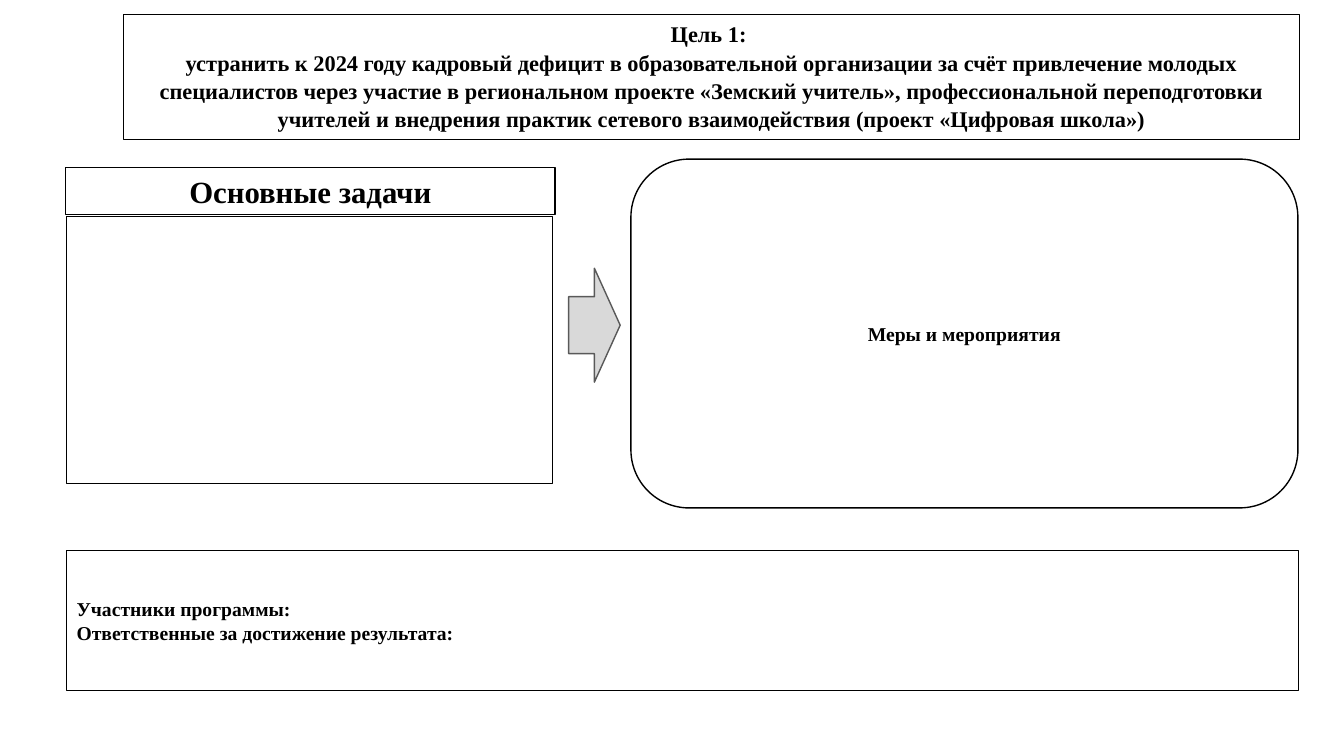
from pptx import Presentation
from pptx.dml.color import RGBColor
from pptx.enum.shapes import MSO_SHAPE
from pptx.enum.text import MSO_ANCHOR, PP_ALIGN
from pptx.util import Cm, Pt

RECT, ROUNDED, ARROW = MSO_SHAPE.RECTANGLE, MSO_SHAPE.ROUNDED_RECTANGLE, MSO_SHAPE.RIGHT_ARROW
TOP, MIDDLE = MSO_ANCHOR.TOP, MSO_ANCHOR.MIDDLE
CENTER, JUSTIFY = PP_ALIGN.CENTER, PP_ALIGN.JUSTIFY
FONT = "Times New Roman"
BLACK, WHITE, LIGHT_GRAY, DARK_GRAY = "000000", "FFFFFF", "D9D9D9", "595959"
GOAL = [
    "Цель 1: ",
    "устранить к 2024 году кадровый дефицит в образовательной организации за счёт "
    "привлечение молодых специалистов через участие в региональном проекте «Земский "
    "учитель», профессиональной переподготовки учителей и внедрения практик сетевого "
    "взаимодействия (проект «Цифровая школа»)",
]
PEOPLE = ["Участники программы:", "Ответственные за достижение результата:"]


def color(value):
    """Turn a hex string into a colour."""
    return RGBColor.from_string(value)


def add_box(shapes, kind, box, fill=WHITE, line=BLACK, width=1):
    """Add a filled, outlined shape; box is left, top, width, height in cm."""
    sp = shapes.add_shape(kind, *(Cm(v) for v in box))
    sp.shadow.inherit = False
    sp.fill.solid()
    sp.fill.fore_color.rgb = color(fill)
    sp.line.color.rgb = color(line)
    sp.line.width = Pt(width)
    return sp


def write(sp, lines, size, align=CENTER, anchor=MIDDLE, spacing=1.0):
    """Write bold black paragraphs into a shape."""
    tf = sp.text_frame
    tf.word_wrap = True
    tf.vertical_anchor = anchor
    tf.text = "\n".join(lines)
    for p in tf.paragraphs:
        p.alignment = align
        p.line_spacing = spacing
        p.font.name = FONT
        p.font.size = Pt(size)
        p.font.bold = True
        p.font.color.rgb = color(BLACK)


def main():
    """Build the slide with the goal, tasks, measures and participants."""
    prs = Presentation()
    prs.slide_width, prs.slide_height = Cm(33.87), Cm(19.05)
    s = prs.slides.add_slide(prs.slide_layouts[6])

    goal = add_box(s.shapes, RECT, (3.12, 0.36, 29.62, 3.15), width=0.5)
    write(goal, GOAL, 16, anchor=TOP, spacing=1.05)

    tasks = s.shapes.add_group_shape()
    heading = add_box(tasks.shapes, RECT, (1.65, 4.22, 12.34, 1.19))
    write(heading, ["Основные задачи"], 22)
    add_box(tasks.shapes, RECT, (1.68, 5.46, 12.24, 6.73))

    measures = add_box(s.shapes, ROUNDED, (15.9, 4.01, 16.81, 8.79))
    write(measures, ["Меры и мероприятия"], 14)
    add_box(s.shapes, ARROW, (14.33, 6.76, 1.3, 2.87), LIGHT_GRAY, DARK_GRAY)

    people = add_box(s.shapes, RECT, (1.68, 13.87, 31.04, 3.53))
    write(people, PEOPLE, 14, align=JUSTIFY)

    prs.save("out.pptx")


if __name__ == "__main__":
    main()
